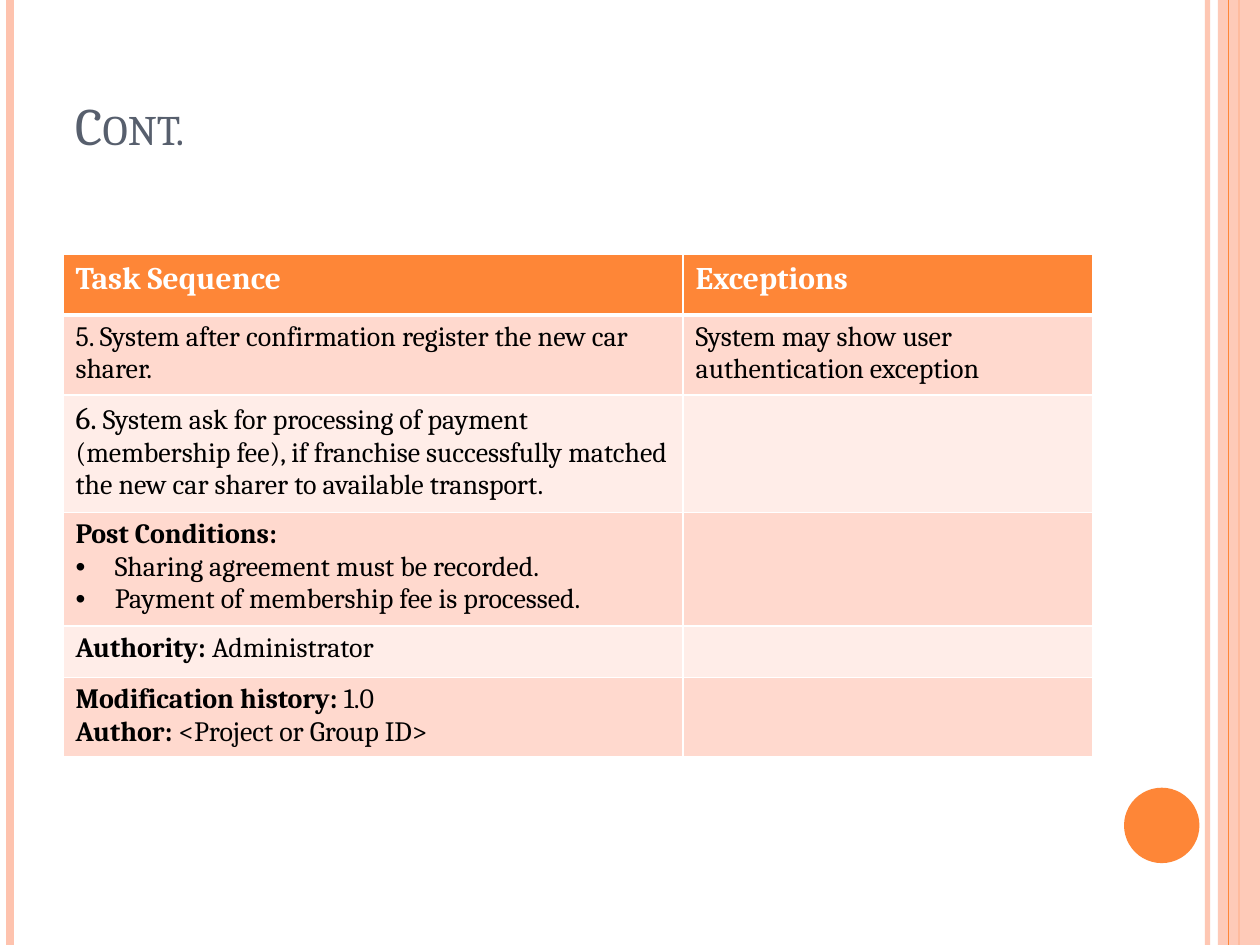
from lxml.etree import SubElement
from pptx import Presentation
from pptx.dml.color import RGBColor
from pptx.enum.shapes import MSO_CONNECTOR, MSO_SHAPE
from pptx.enum.text import MSO_ANCHOR
from pptx.oxml.ns import qn
from pptx.util import Cm, Pt

COLOURS = {
    "accent": "FE8637", "pale": "FEC3AE", "title": "575F6D",
    "band_dark": "FFD9CE", "band_light": "FFEDE8",
    "white": "FFFFFF", "black": "000000",
}
FONT = "Cambria"
PAGE_WIDTH, PAGE_HEIGHT = 25.4, 19.05


def colour(name):
    return RGBColor.from_string(COLOURS[name])


def add_span(paragraph, text, size=16, tone="black", bold=False, small_caps=False):
    span = paragraph.add_run()
    span.text = text
    span.font.name = FONT
    span.font.size = Pt(size)
    span.font.bold = bold
    span.font.color.rgb = colour(tone)
    if small_caps:
        span.font._element.set("cap", "small")


def add_bullet(paragraph, indent=Cm(0.79)):
    properties = paragraph._p.get_or_add_pPr()
    properties.set("marL", str(indent))
    properties.set("indent", str(-indent))
    SubElement(properties, qn("a:buFont"), typeface="Arial")
    SubElement(properties, qn("a:buChar"), char="•")


def set_opacity(element, percent):
    """Make the first solid colour inside element partly transparent."""
    tint = next(element.iter(qn("a:srgbClr")))
    SubElement(tint, qn("a:alpha"), val=str(percent * 1000))


def set_borders(cell, top=1, bottom=1):
    properties = cell._tc.get_or_add_tcPr()
    for side, width in (("L", 1), ("R", 1), ("T", top), ("B", bottom)):
        line = SubElement(properties, qn(f"a:ln{side}"), w=str(Pt(width)))
        fill = SubElement(line, qn("a:solidFill"))
        SubElement(fill, qn("a:srgbClr"), val=COLOURS["white"])


class SlideBuilder:
    """Holds the current page and draws each kind of element on it."""

    def __init__(self, page):
        self.page = page

    def vertical_line(self, x, width, tone, opacity=100):
        line = self.page.shapes.add_connector(
            MSO_CONNECTOR.STRAIGHT, Cm(x), Cm(0), Cm(x), Cm(PAGE_HEIGHT))
        line.line.width = Pt(width)
        line.line.color.rgb = colour(tone)
        properties = line._element.spPr
        if opacity < 100:
            set_opacity(properties, opacity)
        SubElement(properties, qn("a:effectLst"))

    def shape(self, kind, left, top, width, height, tone, opacity=100):
        shape = self.page.shapes.add_shape(
            kind, Cm(left), Cm(top), Cm(width), Cm(height))
        shape.shadow.inherit = False
        shape.fill.solid()
        shape.fill.fore_color.rgb = colour(tone)
        shape.line.fill.background()
        if opacity < 100:
            set_opacity(shape._element.spPr, opacity)

    def title(self, text, left, top, width, height):
        box = self.page.shapes.add_textbox(Cm(left), Cm(top), Cm(width), Cm(height))
        frame = box.text_frame
        frame.word_wrap = True
        frame.vertical_anchor = MSO_ANCHOR.BOTTOM
        add_span(frame.paragraphs[0], text, size=30, tone="title", small_caps=True)

    def table(self, rows, left, top, widths, heights):
        """Each cell is a list of paragraphs, each a list of (text, format) spans."""
        table = self.page.shapes.add_table(
            len(rows), len(widths), Cm(left), Cm(top),
            Cm(sum(widths)), Cm(sum(heights))).table
        for column, width in zip(table.columns, widths):
            column.width = Cm(width)
        for index, (row, height) in enumerate(zip(rows, heights)):
            table.rows[index].height = Cm(height)
            band = "band_dark" if index % 2 else "band_light"
            for position, paragraphs in enumerate(row):
                cell = table.cell(index, position)
                set_borders(cell, top=3 if index == 1 else 1,
                            bottom=3 if index == 0 else 1)
                cell.fill.solid()
                cell.fill.fore_color.rgb = colour("accent" if index == 0 else band)
                self.fill_cell(cell, paragraphs)

    def fill_cell(self, cell, paragraphs):
        frame = cell.text_frame
        for number, spans in enumerate(paragraphs):
            para = frame.add_paragraph() if number else frame.paragraphs[0]
            for text, style in spans:
                if style.get("bullet"):
                    add_bullet(para)
                    style = {}
                add_span(para, text, **style)


PLAIN, BOLD, BULLET = {}, {"bold": True}, {"bullet": True}
HEADER = {"size": 18, "tone": "white", "bold": True}
EMPTY = []

ROWS = [
    [[[("Task Sequence", HEADER)]], [[("Exceptions", HEADER)]]],
    [[[("5. System after confirmation register the new car sharer.", PLAIN)]],
     [[("System may show user authentication exception", PLAIN)]]],
    [[[("6. ", {"size": 18}),
       ("System ask for processing of payment (membership fee), if franchise "
        "successfully matched the new car sharer to available transport.", PLAIN)]],
     EMPTY],
    [[[("Post Conditions:", BOLD)],
      [("Sharing agreement must be recorded.", BULLET)],
      [("Payment of membership fee is processed.", BULLET)]], EMPTY],
    [[[("Authority: ", BOLD), ("Administrator", PLAIN)]], EMPTY],
    [[[("Modification history: ", BOLD), ("1.0", PLAIN)],
      [("Author:", BOLD), (" <Project or Group ID>", PLAIN)]], EMPTY],
]


def main():
    deck = Presentation()
    deck.slide_width, deck.slide_height = Cm(PAGE_WIDTH), Cm(PAGE_HEIGHT)
    builder = SlideBuilder(deck.slides.add_slide(deck.slide_layouts[6]))

    builder.vertical_line(24.34, 3, "pale", opacity=93)
    builder.vertical_line(0.21, 4.5, "pale")
    builder.vertical_line(24.98, 1.5, "accent")
    builder.shape(MSO_SHAPE.RECTANGLE, 24.55, 0, 0.85, PAGE_HEIGHT, "pale", opacity=87)
    builder.vertical_line(24.76, 0.75, "accent")
    builder.shape(MSO_SHAPE.OVAL, 22.66, 15.88, 1.52, 1.52, "accent")

    builder.title("Cont.", 1.27, 0.1, 20.75, 3.18)
    builder.table(ROWS, 1.27, 5.13, widths=[12.5, 8.25],
                  heights=[1.22, 1.52, 2.28, 2.2, 1.04, 1.54])
    deck.save("out.pptx")


if __name__ == "__main__":
    main()
